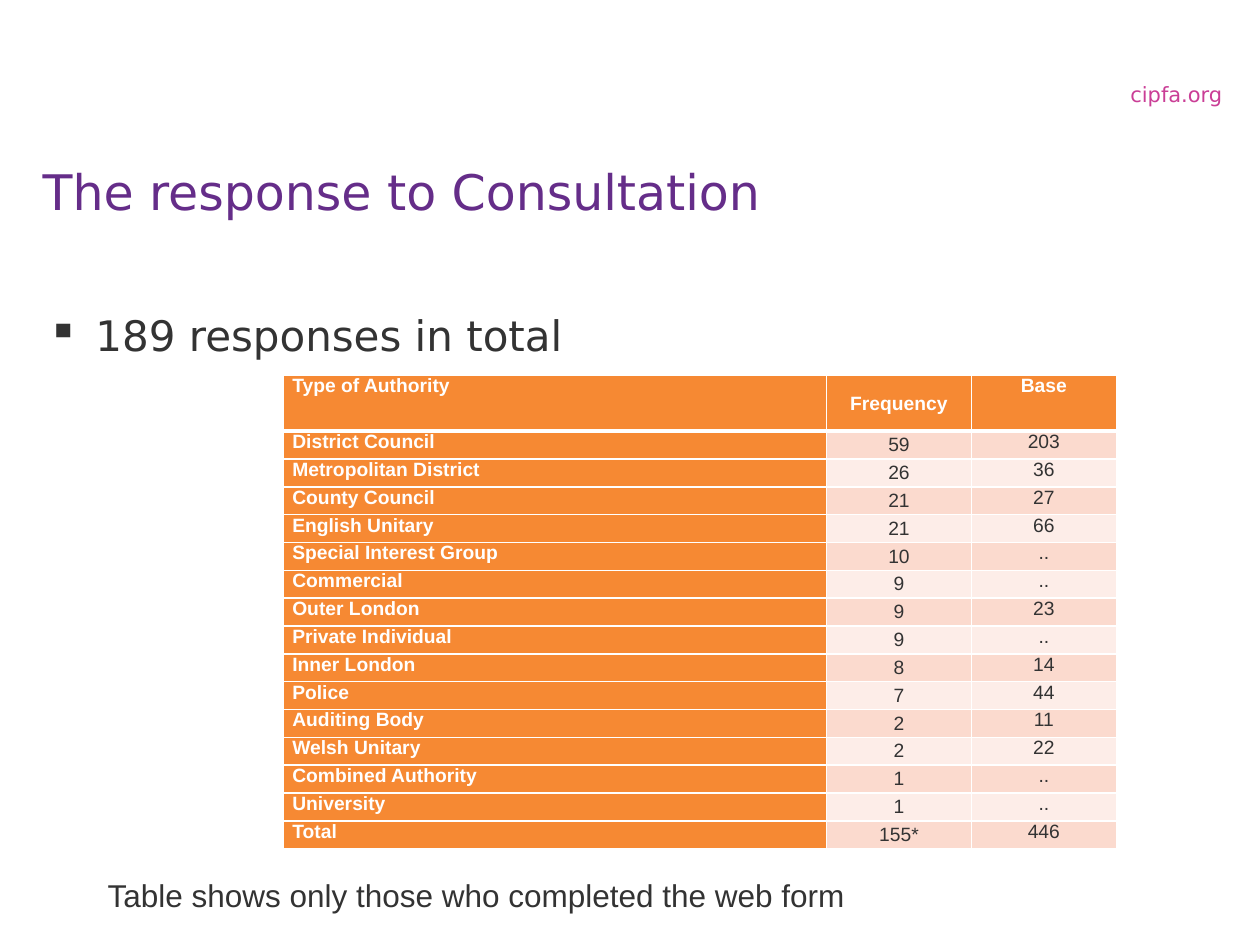
from dataclasses import dataclass

from lxml.etree import SubElement
from pptx import Presentation
from pptx.dml.color import RGBColor
from pptx.enum.text import MSO_ANCHOR, PP_ALIGN
from pptx.oxml import parse_xml
from pptx.oxml.ns import nsdecls, qn
from pptx.util import Inches, Pt


@dataclass(frozen=True)
class Theme:
    """Colours, fonts and type sizes of the slide."""
    purple: str = "652D89"
    pink: str = "CA3E96"
    ink: str = "333333"
    white: str = "FFFFFF"
    orange: str = "F68933"
    bands: tuple = ("FBDACE", "FDEDE8")
    heading_font: str = "DejaVu Sans"
    table_font: str = "Arial"
    title_size: int = 28
    bullet_size: int = 24
    note_size: int = 18
    address_size: int = 12
    table_size: int = 11


THEME = Theme()

HEADER = ("Type of Authority", "Frequency", "Base")
RESPONSES = (
    ("District Council", "59", "203"),
    ("Metropolitan District", "26", "36"),
    ("County Council", "21", "27"),
    ("English Unitary", "21", "66"),
    ("Special Interest Group", "10", ".."),
    ("Commercial", "9", ".."),
    ("Outer London", "9", "23"),
    ("Private Individual", "9", ".."),
    ("Inner London", "8", "14"),
    ("Police", "7", "44"),
    ("Auditing Body", "2", "11"),
    ("Welsh Unitary", "2", "22"),
    ("Combined Authority", "1", ".."),
    ("University", "1", ".."),
    ("Total", "155*", "446"),
)


def add_run(paragraph, text, size, font, color, bold=False):
    """Add one formatted run to a paragraph."""
    run = paragraph.add_run()
    run.text = text
    run.font.size = Pt(size)
    run.font.name = font
    run.font.bold = bold
    run.font.color.rgb = RGBColor.from_string(color)


def add_text(slide, box, text, size, font, color, align=PP_ALIGN.LEFT):
    """Place a wrapped one-line text box and return its paragraph."""
    frame = slide.shapes.add_textbox(*map(Inches, box)).text_frame
    frame.word_wrap = True
    paragraph = frame.paragraphs[0]
    paragraph.alignment = align
    add_run(paragraph, text, size, font, color)
    return paragraph


def add_bullet(slide, box, text):
    """Place a bullet point with a hanging indent."""
    paragraph = add_text(slide, box, text, THEME.bullet_size,
                         THEME.heading_font, THEME.ink)
    properties = paragraph._p.get_or_add_pPr()
    indent = Inches(0.38)
    properties.set("marL", str(indent))
    properties.set("indent", str(-indent))
    SubElement(properties, qn("a:buChar")).set("char", "▪")


def set_borders(cell, widths):
    """Draw white cell borders, with widths in points keyed by side."""
    properties = cell._tc.get_or_add_tcPr()
    for position, side in enumerate("LRTB"):
        properties.insert(position, parse_xml(
            f'<a:ln{side} {nsdecls("a")} w="{Pt(widths.get(side, 1))}">'
            f'<a:solidFill><a:srgbClr val="{THEME.white}"/></a:solidFill>'
            f'</a:ln{side}>'))


def fill_cell(cell, text, row, column):
    """Write and style one cell by its place in the table."""
    is_heading = row == 0 or column == 0
    cell.margin_left = cell.margin_right = Inches(0.07)
    cell.margin_top = cell.margin_bottom = 0
    cell.vertical_anchor = MSO_ANCHOR.MIDDLE if column == 1 else MSO_ANCHOR.TOP
    cell.fill.solid()
    cell.fill.fore_color.rgb = RGBColor.from_string(
        THEME.orange if is_heading else THEME.bands[(row - 1) % 2])
    set_borders(cell, {0: {"B": 3}, 1: {"T": 3}}.get(row, {}))
    paragraph = cell.text_frame.paragraphs[0]
    paragraph.alignment = PP_ALIGN.CENTER if column else PP_ALIGN.LEFT
    add_run(paragraph, text, THEME.table_size, THEME.table_font,
            THEME.white if is_heading else THEME.ink, is_heading)


def add_response_table(slide, box):
    """Place the table of responses, its header two rows high."""
    left, top, width, height = map(Inches, box)
    rows = (HEADER, *RESPONSES)
    table = slide.shapes.add_table(
        len(rows), len(HEADER), left, top, width, height).table
    count_width = Inches(1.15)
    table.columns[0].width = width - 2 * count_width
    table.columns[1].width = table.columns[2].width = count_width
    row_height = height // (len(rows) + 1)
    for row, values in enumerate(rows):
        table.rows[row].height = row_height * (1 if row else 2)
        for column, value in enumerate(values):
            fill_cell(table.cell(row, column), value, row, column)


def build_response_slide(presentation):
    """Add the slide on the response to the consultation."""
    slide = presentation.slides.add_slide(presentation.slide_layouts[6])
    add_text(slide, (6.65, 0.6, 3.15, 0.3), "cipfa.org", THEME.address_size,
             THEME.heading_font, THEME.pink, PP_ALIGN.RIGHT)
    add_text(slide, (0.24, 1.23, 9.41, 0.94), "The response to Consultation",
             THEME.title_size, THEME.heading_font, THEME.purple)
    add_bullet(slide, (0.28, 2.41, 9.37, 4.25), "189 responses in total")
    add_response_table(slide, (2.25, 2.98, 6.61, 3.76))
    add_text(slide, (0.75, 6.9, 6.06, 0.4),
             "Table shows only those who completed the web form",
             THEME.note_size, THEME.table_font, THEME.ink, PP_ALIGN.CENTER)


def main():
    """Build and save the presentation."""
    presentation = Presentation()
    presentation.slide_width = Inches(10)
    presentation.slide_height = Inches(7.5)
    build_response_slide(presentation)
    presentation.save("out.pptx")


if __name__ == "__main__":
    main()
